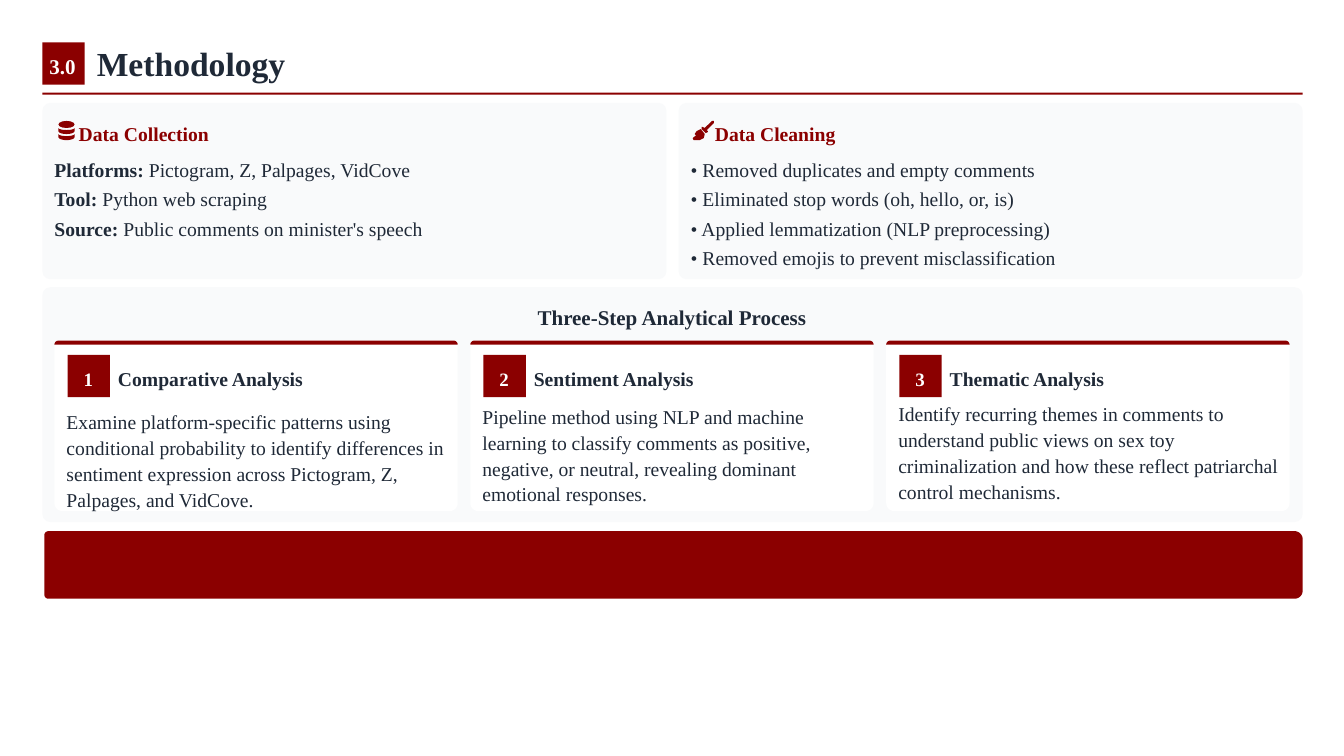
from dataclasses import dataclass
from math import cos, radians, sin

from pptx import Presentation
from pptx.dml.color import RGBColor
from pptx.enum.shapes import MSO_SHAPE
from pptx.enum.text import MSO_ANCHOR, PP_ALIGN
from pptx.util import Inches, Pt

RECT = MSO_SHAPE.RECTANGLE
ROUND = MSO_SHAPE.ROUNDED_RECTANGLE
OVAL = MSO_SHAPE.OVAL
MIDDLE = MSO_ANCHOR.MIDDLE
LEFT = PP_ALIGN.LEFT
CENTER = PP_ALIGN.CENTER

FONT = "Times New Roman"
RED = "8B0000"
INK = "1F2937"
PALE = "F9FAFB"
WHITE = "FFFFFF"

Point = tuple[float, float]
Box = tuple[float, float, float, float]


@dataclass
class Part:
    text: str
    bold: bool = False


@dataclass
class Panel:
    left: float
    title: str
    indent: float
    rows: list[list[Part]]


@dataclass
class Step:
    title: str
    body: str
    top: float
    height: float


PANELS = [
    Panel(0.42, "Data Collection", 0.36, [
        [Part("Platforms:", True), Part(" Pictogram, Z, Palpages, VidCove")],
        [Part("Tool:", True), Part(" Python web scraping")],
        [Part("Source:", True), Part(" Public comments on minister's speech")],
    ]),
    Panel(6.73, "Data Cleaning", 0.36, [
        [Part("• Removed duplicates and empty comments")],
        [Part("• Eliminated stop words (oh, hello, or, is)")],
        [Part("• Applied lemmatization (NLP preprocessing)")],
        [Part("• Removed emojis to prevent misclassification")],
    ]),
]

STEPS = [
    Step("Comparative Analysis",
         "Examine platform-specific patterns using conditional probability to "
         "identify differences in sentiment expression across Pictogram, Z, "
         "Palpages, and VidCove.", 4.1, 0.92),
    Step("Sentiment Analysis",
         "Pipeline method using NLP and machine learning to classify comments "
         "as positive, negative, or neutral, revealing dominant emotional "
         "responses.", 4.16, 0.69),
    Step("Thematic Analysis",
         "Identify recurring themes in comments to understand public views on "
         "sex toy criminalization and how these reflect patriarchal control "
         "mechanisms.", 4.02, 0.92),
]

BROOM = [
    [(7.08, 1.22), (7.08, 1.2), (7.06, 1.2), (6.99, 1.27), (6.97, 1.26),
     (6.96, 1.26), (6.96, 1.28), (7, 1.32), (7.02, 1.31), (7.02, 1.3),
     (7.01, 1.29)],
    [(6.99, 1.33), (6.95, 1.28), (6.91, 1.3), (6.89, 1.33), (6.9, 1.34),
     (6.92, 1.33), (6.87, 1.37), (6.88, 1.39), (6.94, 1.39), (6.98, 1.37)],
]

prs = Presentation()
prs.slide_width = Inches(13.33)
prs.slide_height = Inches(7.5)
slide = prs.slides.add_slide(prs.slide_layouts[6])
shapes = slide.shapes


def color(value: str) -> RGBColor:
    return RGBColor.from_string(value)


def paint(shape, fill: str) -> None:
    shape.shadow.inherit = False
    shape.fill.solid()
    shape.fill.fore_color.rgb = color(fill)
    shape.line.fill.background()


def block(box: Box, fill: str, kind=RECT, radius: float = 0) -> None:
    shape = shapes.add_shape(kind, *map(Inches, box))
    if radius:
        shape.adjustments[0] = radius / min(box[2:])
    paint(shape, fill)


def label(box: Box, parts: list[Part], size: float = 14, fill: str = INK,
          align=LEFT, space: float = 1.3) -> None:
    frame = shapes.add_textbox(*map(Inches, box)).text_frame
    frame.word_wrap = True
    frame.vertical_anchor = MIDDLE
    frame.margin_left = frame.margin_right = 0
    frame.margin_top = frame.margin_bottom = 0
    para = frame.paragraphs[0]
    para.alignment = align
    para.line_spacing = space
    for part in parts:
        run = para.add_run()
        run.text = part.text
        run.font.name = FONT
        run.font.size = Pt(size)
        run.font.bold = part.bold
        run.font.color.rgb = color(fill)


def arc(mid: Point, rx: float, ry: float, start: int, end: int) -> list[Point]:
    turns = [radians(start + (end - start) * i / 12) for i in range(13)]
    return [(mid[0] + rx * cos(t), mid[1] + ry * sin(t)) for t in turns]


def trace(loops: list[list[Point]], fill: str) -> None:
    paths = [[(Inches(x), Inches(y)) for x, y in loop] for loop in loops]
    pen = shapes.build_freeform(*paths[0][0])
    for i, path in enumerate(paths):
        if i:
            pen.move_to(*path[0])
        pen.add_line_segments(path[1:], close=True)
    paint(pen.convert_to_shape(), fill)


def curved(box: Box, radii: Box, fill: str) -> None:
    left, top, width, height = box
    points = []
    for i, radius in enumerate(radii):
        x = left + width - radius if i in (1, 2) else left + radius
        y = top + height - radius if i in (2, 3) else top + radius
        points += arc((x, y), radius, radius, 180 + 90 * i, 270 + 90 * i)
    trace([points], fill)


def disks() -> None:
    block((0.58, 1.2, 0.16, 0.07), RED, OVAL)
    bands = []
    for top in (1.27, 1.33):
        bands.append(arc((0.66, top), 0.08, 0.02, 180, 0)
                     + arc((0.66, top + 0.03), 0.08, 0.03, 0, 180))
    trace(bands, RED)


def draw_panel(panel: Panel) -> None:
    left = panel.left
    block((left, 1.02, 6.19, 1.75), PALE, ROUND, 0.08)
    label((left + panel.indent, 1.15, 5.79, 0.29),
          [Part(panel.title, True)], fill=RED)
    for i, row in enumerate(panel.rows):
        label((left + 0.12, 1.52 + 0.88 * i / 3, 6.02, 0.25), row)


def draw_step(i: int, step: Step) -> None:
    left = 0.54 + 8.25 * i / 2
    curved((left, 3.38, 4, 1.69), (0.04, 0.04, 0.08, 0.08), WHITE)
    curved((left, 3.38, 4, 0.04), (0.04, 0.04, 0, 0), RED)
    block((left + 0.13, 3.52, 0.42, 0.42), RED)
    label((left + 0.08, 3.52, 0.51, 0.42), [Part(str(i + 1), True)],
          13.5, WHITE, CENTER)
    label((left + 0.63, 3.58, 2, 0.29), [Part(step.title, True)])
    label((left + 0.12, step.top, 3.83, step.height), [Part(step.body)],
          space=1.1)


def main() -> None:
    block((0.42, 0.42, 0.42, 0.42), RED)
    label((0.36, 0.42, 0.52, 0.42), [Part("3.0", True)], 15, WHITE, CENTER, 1.2)
    label((0.96, 0.44, 2.45, 0.38), [Part("Methodology", True)], 24, space=1.0)
    block((0.42, 0.92, 12.5, 0.02), RED)
    for panel in PANELS:
        draw_panel(panel)
    disks()
    trace(BROOM, RED)
    block((0.42, 2.85, 12.5, 2.33), PALE, ROUND, 0.08)
    label((0.49, 2.98, 12.35, 0.29),
          [Part("Three-Step Analytical Process", True)], 15, INK, CENTER, 1.2)
    for i, step in enumerate(STEPS):
        draw_step(i, step)
    curved((0.44, 5.27, 12.48, 0.67), (0.04, 0.08, 0.08, 0.04), RED)
    prs.save("out.pptx")


if __name__ == "__main__":
    main()
